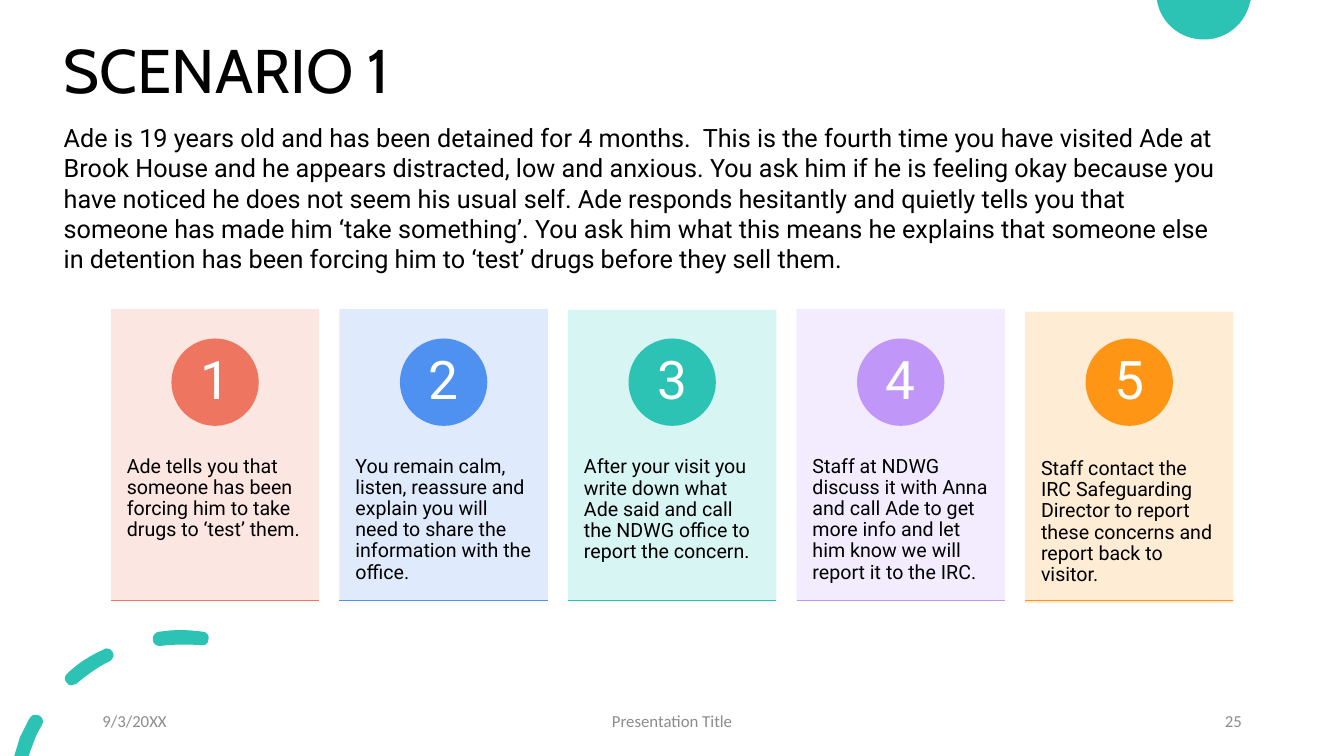
from dataclasses import dataclass

from lxml.etree import SubElement
from pptx import Presentation
from pptx.dml.color import RGBColor
from pptx.enum.shapes import MSO_CONNECTOR as Connector, MSO_SHAPE as Shape
from pptx.enum.text import MSO_ANCHOR as Anchor, MSO_AUTO_SIZE as AutoSize, PP_ALIGN as Align
from pptx.oxml.ns import qn
from pptx.util import Inches, Pt

# The slide is a grid of square cells, 16 columns by 9 rows
CELL = Inches(7.5) / 9
CARD_TOP, CARD_W, CARD_H = 3.68, 2.48, 3.47
CARD_LEFT, CARD_PITCH = 1.32, 2.72
CIRCLE, NUMBER = 1.04, 0.73

COLORS = {
    "black": "000000", "white": "FFFFFF", "grey": "8C8C8C",
    "coral": "EE7661", "coral tint": "FCE4DF",
    "blue": "4E91F0", "blue tint": "DCE9FC",
    "teal": "2CC3B4", "teal tint": "D3F5F2",
    "purple": "C097F8", "purple tint": "F2EAFE",
    "orange": "FF9514", "orange tint": "FFEAD0",
}


@dataclass
class Step:
    text: str
    color: str
    drop: float = 0


@dataclass
class Footer:
    text: str
    left: float
    width: float
    align: Align


STEPS = [
    Step("Ade tells you that someone has been forcing him to take drugs to ‘test’ them.", "coral"),
    Step("You remain calm, listen, reassure and explain you will need to share the "
         "information with the office.", "blue"),
    Step("After your visit you write down what Ade said and call the NDWG office to "
         "report the concern.", "teal", 0.01),
    Step("Staff at NDWG discuss it with Anna and call Ade to get more info and let him "
         "know we will report it to the IRC.", "purple"),
    Step("Staff contact the IRC Safeguarding Director to report these concerns and "
         "report back to visitor.", "orange", 0.03),
]

FOOTERS = [
    Footer("9/3/20XX", 1.1, 3.6, Align.LEFT),
    Footer("Presentation Title", 5.3, 5.4, Align.CENTER),
    Footer("25", 11.3, 3.6, Align.RIGHT),
]

STORY = (
    "Ade is 19 years old and has been detained for 4 months.  This is the fourth time you "
    "have visited Ade at Brook House and he appears distracted, low and anxious. You ask him "
    "if he is feeling okay because you have noticed he does not seem his usual self. Ade "
    "responds hesitantly and quietly tells you that someone has made him ‘take something’. "
    "You ask him what this means he explains that someone else in detention has been forcing "
    "him to ‘test’ drugs before they sell them."
)

# Outlines: a start point, then lines (2 numbers) or Bézier curves (6 numbers)
Outline = list[tuple[float, ...]]
CORNER_DISC: Outline = [
    (13.77, 0), (14.89, 0), (14.88, 0.01),
    (14.83, 0.28, 14.6, 0.47, 14.33, 0.47), (14.05, 0.47, 13.82, 0.28, 13.77, 0.01),
]
ARC_DASHES: list[Outline] = [
    [(0.43, 8.51), (0.41, 8.5, 0.37, 8.52, 0.36, 8.54), (0.31, 8.62, 0.28, 8.7, 0.24, 8.77),
     (0.17, 9), (0.34, 9), (0.4, 8.84), (0.42, 8.77, 0.46, 8.7, 0.5, 8.63),
     (0.53, 8.59, 0.5, 8.53, 0.47, 8.52), (0.46, 8.51, 0.44, 8.51, 0.43, 8.51)],
    [(1.26, 7.72), (1.25, 7.72, 1.24, 7.72, 1.24, 7.73), (1.08, 7.8, 0.92, 7.9, 0.8, 8.02),
     (0.77, 8.04, 0.76, 8.1, 0.79, 8.12), (0.8, 8.15, 0.83, 8.16, 0.85, 8.16),
     (0.88, 8.16, 0.89, 8.15, 0.91, 8.14), (1.03, 8.04, 1.16, 7.94, 1.31, 7.87),
     (1.34, 7.85, 1.37, 7.8, 1.34, 7.76), (1.33, 7.73, 1.3, 7.72, 1.26, 7.72)],
    [(2.15, 7.5), (2.06, 7.5, 1.98, 7.51, 1.9, 7.52), (1.85, 7.52, 1.81, 7.57, 1.82, 7.62),
     (1.82, 7.66, 1.86, 7.69, 1.9, 7.69), (2.08, 7.67, 2.23, 7.67, 2.39, 7.68),
     (2.44, 7.69, 2.48, 7.66, 2.48, 7.62), (2.5, 7.57, 2.46, 7.52, 2.41, 7.52),
     (2.33, 7.51, 2.23, 7.5, 2.15, 7.5)],
]


def cells(*values: float) -> list[int]:
    return [round(v * CELL) for v in values]


def rgb(name: str) -> RGBColor:
    return RGBColor.from_string(COLORS[name])


def paint(s, color: str) -> None:
    s.shadow.inherit = False
    s.fill.solid()
    s.fill.fore_color.rgb = rgb(color)
    s.line.fill.background()


def add_outlines(sp, outlines: list[Outline], color: str) -> None:
    builder = None
    for outline in outlines:
        if builder is None:
            builder = sp.build_freeform(*cells(*outline[0]))
        else:
            builder.move_to(*cells(*outline[0]))
        points = [cells(*part[i:i + 2]) for part in outline[1:] for i in range(0, len(part), 2)]
        builder.add_line_segments(points, close=True)
    s = builder.convert_to_shape()
    paint(s, color)
    # Join each three line ends of a curve into one Bézier segment
    lines = s._element.iter(qn("a:lnTo"))
    lines = iter(list(lines))
    for part in (part for outline in outlines for part in outline[1:]):
        first = next(lines)
        if len(part) == 6:
            first.tag_name = None
            curve = first.getparent().makeelement(qn("a:cubicBezTo"))
            first.addprevious(curve)
            for line in (first, next(lines), next(lines)):
                curve.append(line[0])
                line.getparent().remove(line)


def write(tf, text: str, size: float, font: str, color: str, align: Align = Align.LEFT,
          spacing: float = 1, anchor: Anchor = Anchor.TOP) -> None:
    tf.word_wrap = True
    tf.vertical_anchor = anchor
    p = tf.paragraphs[0]
    p.text = text
    p.alignment = align
    p.line_spacing = spacing
    p.font.size, p.font.name, p.font.color.rgb = Pt(size), font, rgb(color)


def add_text(sp, box: tuple[float, ...], inset: tuple[float, float] = (0.12, 0.06)):
    tf = sp.add_textbox(*cells(*box)).text_frame
    tf.margin_left = tf.margin_right = cells(inset[0])[0]
    tf.margin_top = tf.margin_bottom = cells(inset[1])[0]
    return tf


def add_card(sp, index: int, step: Step) -> None:
    left, top = CARD_LEFT + index * CARD_PITCH, CARD_TOP + step.drop
    # Tinted panel, slightly see-through
    panel = sp.add_shape(Shape.RECTANGLE, *cells(left, top, CARD_W, CARD_H))
    paint(panel, f"{step.color} tint")
    tint = panel._element.spPr.find(qn("a:solidFill"))[0]
    SubElement(tint, qn("a:alpha"), val="90000")
    tf = add_text(sp, (left, top + 1.32, CARD_W, 2.08), (0.19, 0.43))
    write(tf, step.text, 14, "Roboto", "black", spacing=0.9)
    # Numbered circle
    x, y = left + (CARD_W - CIRCLE) / 2, CARD_TOP + 0.35
    paint(sp.add_shape(Shape.OVAL, *cells(x, y, CIRCLE, CIRCLE)), step.color)
    gap = (CIRCLE - NUMBER) / 2
    tf = add_text(sp, (x + gap, y + gap, NUMBER, NUMBER), (0.08, 0.01))
    write(tf, str(index + 1), 38, "Roboto", "white", Align.CENTER, 0.9, Anchor.MIDDLE)
    # Bottom rule
    bottom = CARD_TOP + CARD_H
    rule = sp.add_connector(Connector.STRAIGHT, *cells(left, bottom, left + CARD_W, bottom))
    rule.line.color.rgb, rule.line.width = rgb(step.color), Pt(1)
    SubElement(rule._element.spPr, qn("a:effectLst"))


def main() -> None:
    prs = Presentation()
    prs.slide_width, prs.slide_height = Inches(13.33), Inches(7.5)
    slide = prs.slides.add_slide(prs.slide_layouts[5])
    sp = slide.shapes

    # Title
    title = sp.title
    title.left, title.top, title.width, title.height = cells(0.64, 0, 13.8, 1.74)
    write(title.text_frame, "SCENARIO 1", 44, "Cabin", "black", spacing=0.9, anchor=Anchor.MIDDLE)

    # Decorations
    add_outlines(sp, [CORNER_DISC], "teal")
    add_outlines(sp, ARC_DASHES, "teal")

    # Cards
    for index, step in enumerate(STEPS):
        add_card(sp, index, step)

    # Footer
    for footer in FOOTERS:
        tf = add_text(sp, (footer.left, 8.34, footer.width, 0.48))
        write(tf, footer.text, 12, "Calibri", "grey", footer.align, anchor=Anchor.MIDDLE)

    # Story
    tf = add_text(sp, (0.64, 1.4, 13.97, 1.94))
    write(tf, STORY, 18, "Roboto", "black")
    tf.auto_size = AutoSize.SHAPE_TO_FIT_TEXT

    prs.save("out.pptx")


if __name__ == "__main__":
    main()
